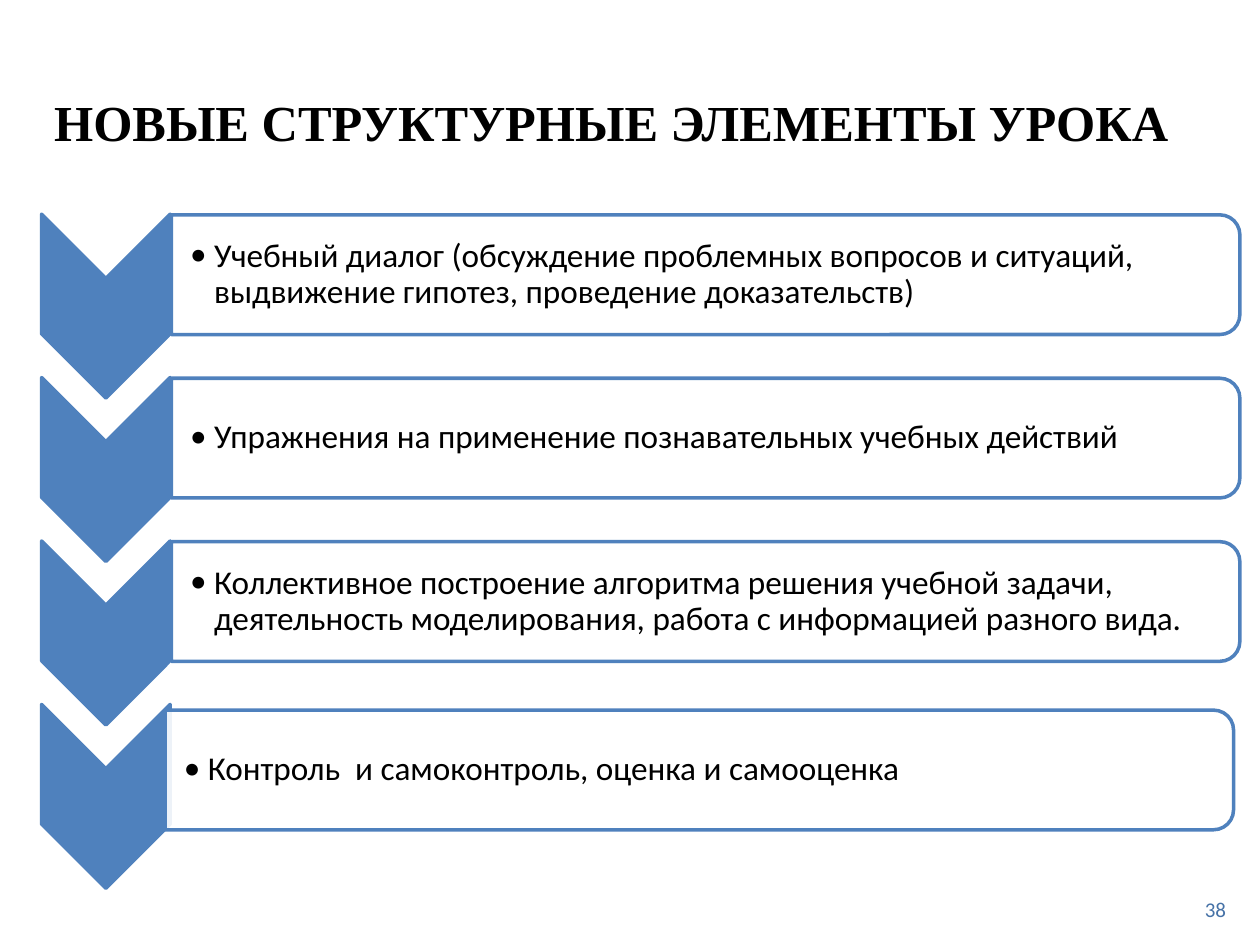
from dataclasses import dataclass

from lxml import etree
from pptx import Presentation
from pptx import util as u
from pptx.dml.color import RGBColor
from pptx.enum import shapes, text
from pptx.oxml.ns import qn

WIDTH, HEIGHT = 10, 7.5
BLUE, WHITE, BLACK = "4F81BD", "FFFFFF", "000000"
FIRST_ROW, ROW_PITCH = 2.18, 1.297
CHEVRON_X, CHEVRON_DROP = 0.84, 0.25
CHEVRON_LENGTH, CHEVRON_BREADTH = 1.46, 1.02
PANEL_X, PANEL_LENGTH, PANEL_BREADTH = 5.6, 8.48, 0.95
TEXT_WIDTH, TEXT_HEIGHT = 8.43, 0.85


@dataclass
class Step:
    wording: str
    shift_x: float = 0
    shift_y: float = 0


STEPS = [
    Step("Учебный диалог (обсуждение проблемных вопросов и ситуаций, "
         "выдвижение гипотез, проведение доказательств)"),
    Step("Упражнения на применение познавательных учебных действий"),
    Step("Коллективное построение алгоритма решения учебной задачи, "
         "деятельность моделирования, работа с информацией разного вида."),
    Step("Контроль  и самоконтроль, оценка и самооценка", -0.05, 0.04),
]


def color(code: str) -> RGBColor:
    return RGBColor.from_string(code)


def write(box, wording: str, *, size: float, font: str = "Calibri", code: str = BLACK,
          bold: bool = False, align=text.PP_ALIGN.LEFT):
    frame = box.text_frame
    frame.word_wrap = True
    frame.auto_size = text.MSO_AUTO_SIZE.NONE
    frame.vertical_anchor = text.MSO_ANCHOR.MIDDLE
    para = frame.paragraphs[0]
    para.alignment = align
    span = para.add_run()
    span.text = wording
    span.font.size = u.Pt(size)
    span.font.name = font
    span.font.bold = bold
    span.font.color.rgb = color(code)
    return para


def add_bullet(para, indent: float) -> None:
    properties = para._p.get_or_add_pPr()
    properties.set("marL", str(u.Inches(indent)))
    properties.set("indent", str(-u.Inches(indent)))
    etree.SubElement(properties, qn("a:buFont"), typeface="Calibri")
    etree.SubElement(properties, qn("a:buChar"), char="•")


def add_turned_shape(page, kind, center_x: float, center_y: float, length: float,
                     breadth: float, fill: str, opacity: int = 100) -> None:
    shape = page.shapes.add_shape(
        kind, u.Inches(center_x - length / 2), u.Inches(center_y - breadth / 2),
        u.Inches(length), u.Inches(breadth))
    shape.rotation = 90
    shape.shadow.inherit = False
    shape.fill.solid()
    shape.fill.fore_color.rgb = color(fill)
    if opacity < 100:
        tint = shape.fill._xPr.find(qn("a:solidFill"))[0]
        etree.SubElement(tint, qn("a:alpha"), val=str(opacity * 1000))
    shape.line.color.rgb = color(BLUE)
    shape.line.width = u.Pt(2)


def add_step(page, step: Step, row: int) -> None:
    middle = FIRST_ROW + row * ROW_PITCH
    add_turned_shape(page, shapes.MSO_SHAPE.CHEVRON, CHEVRON_X, middle + CHEVRON_DROP,
                     CHEVRON_LENGTH, CHEVRON_BREADTH, BLUE)
    panel_x, panel_y = PANEL_X + step.shift_x, middle + step.shift_y
    panel = shapes.MSO_SHAPE.ROUND_2_SAME_RECTANGLE
    page.shapes.add_shape
    add_turned_shape(page, panel, panel_x, panel_y, PANEL_BREADTH, PANEL_LENGTH,
                     WHITE, opacity=90)
    box = page.shapes.add_textbox(
        u.Inches(panel_x - PANEL_LENGTH / 2), u.Inches(panel_y - TEXT_HEIGHT / 2),
        u.Inches(TEXT_WIDTH), u.Inches(TEXT_HEIGHT))
    frame = box.text_frame
    frame.margin_left = u.Inches(0.15)
    frame.margin_top = frame.margin_right = frame.margin_bottom = u.Inches(0.01)
    para = write(box, step.wording, size=19)
    para.level = 1
    para.line_spacing = 0.9
    add_bullet(para, 0.19)


def main() -> None:
    deck = Presentation()
    deck.slide_width, deck.slide_height = u.Inches(WIDTH), u.Inches(HEIGHT)
    page = deck.slides.add_slide(deck.slide_layouts[5])

    title = page.shapes.title
    title.left, title.top = u.Inches(0.33), u.Inches(0.5)
    title.width, title.height = u.Inches(9.5), u.Inches(0.92)
    write(title, "НОВЫЕ СТРУКТУРНЫЕ ЭЛЕМЕНТЫ УРОКА", size=28.8,
          font="Times New Roman", bold=True)

    for row, step in enumerate(STEPS):
        add_step(page, step, row)

    number = page.shapes.add_textbox(u.Inches(9), u.Inches(7.08),
                                     u.Inches(0.83), u.Inches(0.27))
    write(number, "38", size=12, code="4672A7", align=text.PP_ALIGN.RIGHT)
    deck.save("out.pptx")


if __name__ == "__main__":
    main()
